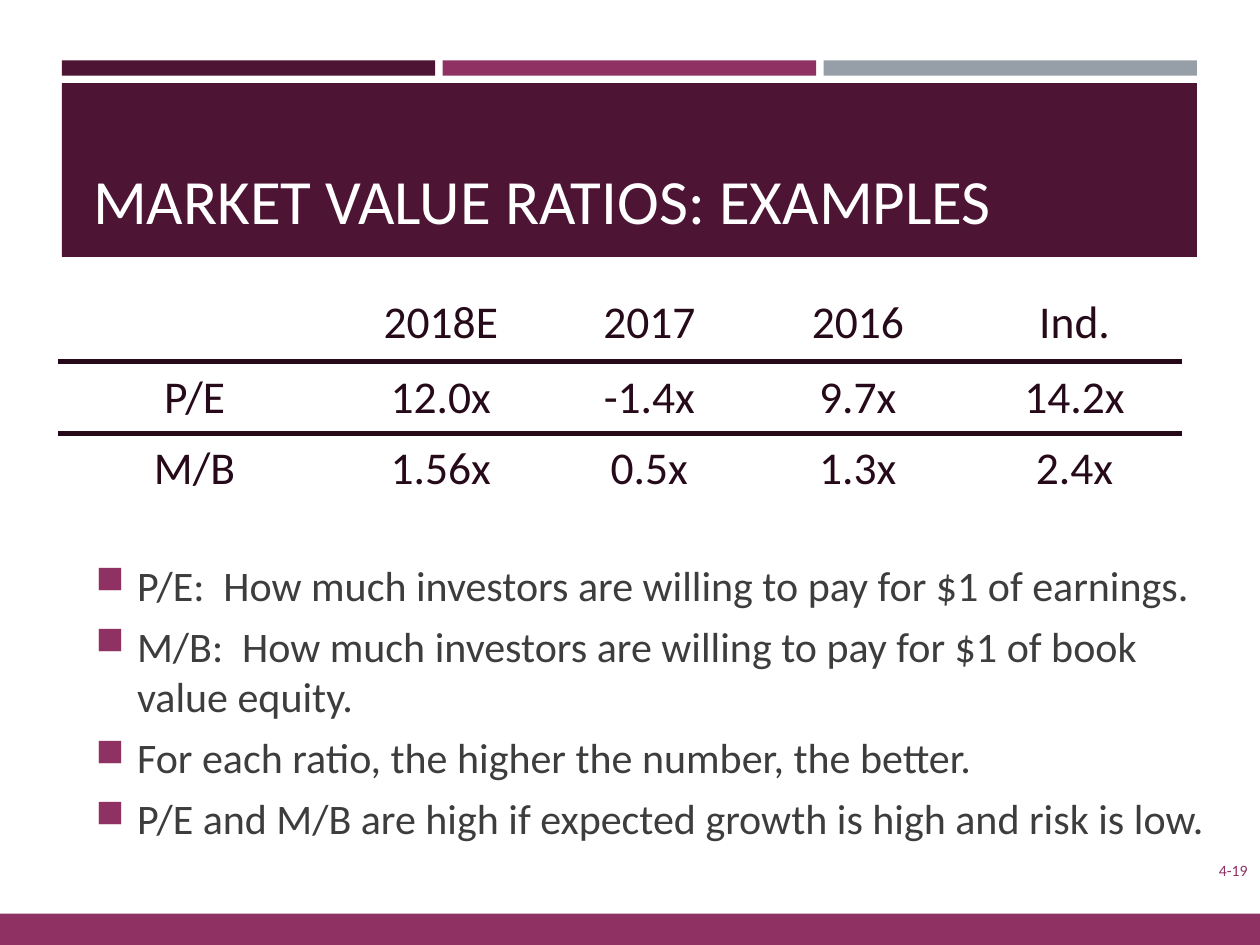
from lxml import etree
from pptx import Presentation
from pptx.dml.color import RGBColor
from pptx.enum.shapes import MSO_SHAPE
from pptx.enum.text import MSO_ANCHOR, PP_ALIGN
from pptx.oxml.ns import qn
from pptx.util import Inches, Pt

RECTANGLE = MSO_SHAPE.RECTANGLE
TOP, MIDDLE, BOTTOM = MSO_ANCHOR.TOP, MSO_ANCHOR.MIDDLE, MSO_ANCHOR.BOTTOM
LEFT, CENTER, RIGHT = PP_ALIGN.LEFT, PP_ALIGN.CENTER, PP_ALIGN.RIGHT

# Content
TITLE = "MARKET VALUE RATIOS: EXAMPLES"
PAGE_NUMBER = "4-19"
RATIOS = [
    ("", "2018E", "2017", "2016", "Ind."),
    ("P/E", "12.0x", "-1.4x", "9.7x", "14.2x"),
    ("M/B", "1.56x", "0.5x", "1.3x", "2.4x"),
]
BULLETS = [
    "P/E:  How much investors are willing to pay for $1 of earnings.",
    "M/B:  How much investors are willing to pay for $1 of book value equity.",
    "For each ratio, the higher the number, the better.",
    "P/E and M/B are high if expected growth is high and risk is low.",
]

# Look
FONT = "Calibri"
PLUM, MAGENTA, GRAY = "4D1434", "903163", "969FA7"
WHITE, TABLE_INK, BODY_INK = "FFFFFF", "270A1A", "3D3D3D"

# Layout in inches
PAGE_WIDTH, PAGE_HEIGHT = 10, 7.5
BAND_LEFT, BAND_WIDTH = 0.49, 9.01
STRIPE_GAP = 0.06
FOOTER_HEIGHT = 0.25
COLUMN_WIDTHS = [2.17, 1.74, 1.57, 1.74, 1.7]
ROW_HEIGHTS = [0.58, 0.57, 0.57]


def color(hex_code):
    return RGBColor.from_string(hex_code)


def add_bar(page, left, top, width, height, fill):
    bar = page.shapes.add_shape(
        RECTANGLE, Inches(left), Inches(top), Inches(width), Inches(height))
    bar.shadow.inherit = False
    bar.fill.solid()
    bar.fill.fore_color.rgb = color(fill)
    bar.line.fill.background()


def style_paragraph(para, size, ink, align):
    para.alignment = align
    para.font.name = FONT
    para.font.size = Pt(size)
    para.font.color.rgb = color(ink)


def add_text(page, area, lines, size, ink, anchor, align=LEFT):
    box = page.shapes.add_textbox(*(Inches(length) for length in area))
    frame = box.text_frame
    frame.word_wrap = True
    frame.vertical_anchor = anchor
    frame.text = "\n".join(lines)
    for para in frame.paragraphs:
        style_paragraph(para, size, ink, align)
    return frame


def add_bullet(para):
    para.space_after = Pt(6)
    properties = para._p.get_or_add_pPr()
    properties.set("marL", str(Inches(0.33)))
    properties.set("indent", str(-Inches(0.33)))
    bullet_color = etree.Element(qn("a:buClr"))
    etree.SubElement(bullet_color, qn("a:srgbClr"), val=MAGENTA)
    bullet_size = etree.Element(qn("a:buSzPct"), val="92000")
    bullet_mark = etree.Element(qn("a:buChar"), char="■")
    parts = [bullet_color, bullet_size, bullet_mark]
    defaults = properties.find(qn("a:defRPr"))
    for part in parts:
        if defaults is None:
            properties.append(part)
        else:
            defaults.addprevious(part)


def add_border(cell, side):
    line = etree.Element(qn(f"a:{side}"), w=str(Pt(3)))
    fill = etree.SubElement(line, qn("a:solidFill"))
    etree.SubElement(fill, qn("a:srgbClr"), val=TABLE_INK)
    cell._tc.get_or_add_tcPr().insert(0, line)


def add_ratio_table(page):
    frame = page.shapes.add_table(
        len(RATIOS), len(COLUMN_WIDTHS), Inches(0.46), Inches(2.29),
        Inches(sum(COLUMN_WIDTHS)), Inches(sum(ROW_HEIGHTS)))
    table = frame.table
    table.first_row = table.horz_banding = False
    # Built-in style without fills or grid lines
    style = table._tbl.tblPr.find(qn("a:tableStyleId"))
    style.text = "{2D5ABB26-0587-4C30-8999-92F81FD0307C}"
    for column, width in zip(table.columns, COLUMN_WIDTHS):
        column.width = Inches(width)
    for row, height in zip(table.rows, ROW_HEIGHTS):
        row.height = Inches(height)
    for row_index, values in enumerate(RATIOS):
        for column_index, value in enumerate(values):
            cell = table.cell(row_index, column_index)
            cell.text = value
            cell.fill.background()
            cell.vertical_anchor = MIDDLE if row_index else TOP
            style_paragraph(cell.text_frame.paragraphs[0], 26, TABLE_INK, CENTER)
            # Rule between the header and the first ratio
            if row_index < 2:
                add_border(cell, "lnT" if row_index else "lnB")


def main():
    deck = Presentation()
    deck.slide_width, deck.slide_height = Inches(PAGE_WIDTH), Inches(PAGE_HEIGHT)
    page = deck.slides.add_slide(deck.slide_layouts[6])

    # Three stripes above the title band
    stripes = [PLUM, MAGENTA, GRAY]
    stripe_width = (BAND_WIDTH - STRIPE_GAP * (len(stripes) - 1)) / len(stripes)
    for index, fill in enumerate(stripes):
        left = BAND_LEFT + index * (stripe_width + STRIPE_GAP)
        add_bar(page, left, 0.48, stripe_width, 0.12, fill)

    # Title band and footer bar
    add_bar(page, BAND_LEFT, 0.66, BAND_WIDTH, 1.38, PLUM)
    add_bar(page, 0, PAGE_HEIGHT - FOOTER_HEIGHT, PAGE_WIDTH, FOOTER_HEIGHT, MAGENTA)
    add_text(page, (0.64, 0.75, 8.74, 1.18), [TITLE], 36, WHITE, BOTTOM)
    add_text(page, (8.98, 6.74, 1.02, 0.34), [PAGE_NUMBER], 9, MAGENTA, MIDDLE, RIGHT)

    # Ratios and their meaning
    add_ratio_table(page)
    notes = add_text(page, (0.66, 4.39, 9.08, 2.35), BULLETS, 24, BODY_INK, MIDDLE)
    for para in notes.paragraphs:
        add_bullet(para)

    deck.save("out.pptx")


if __name__ == "__main__":
    main()
